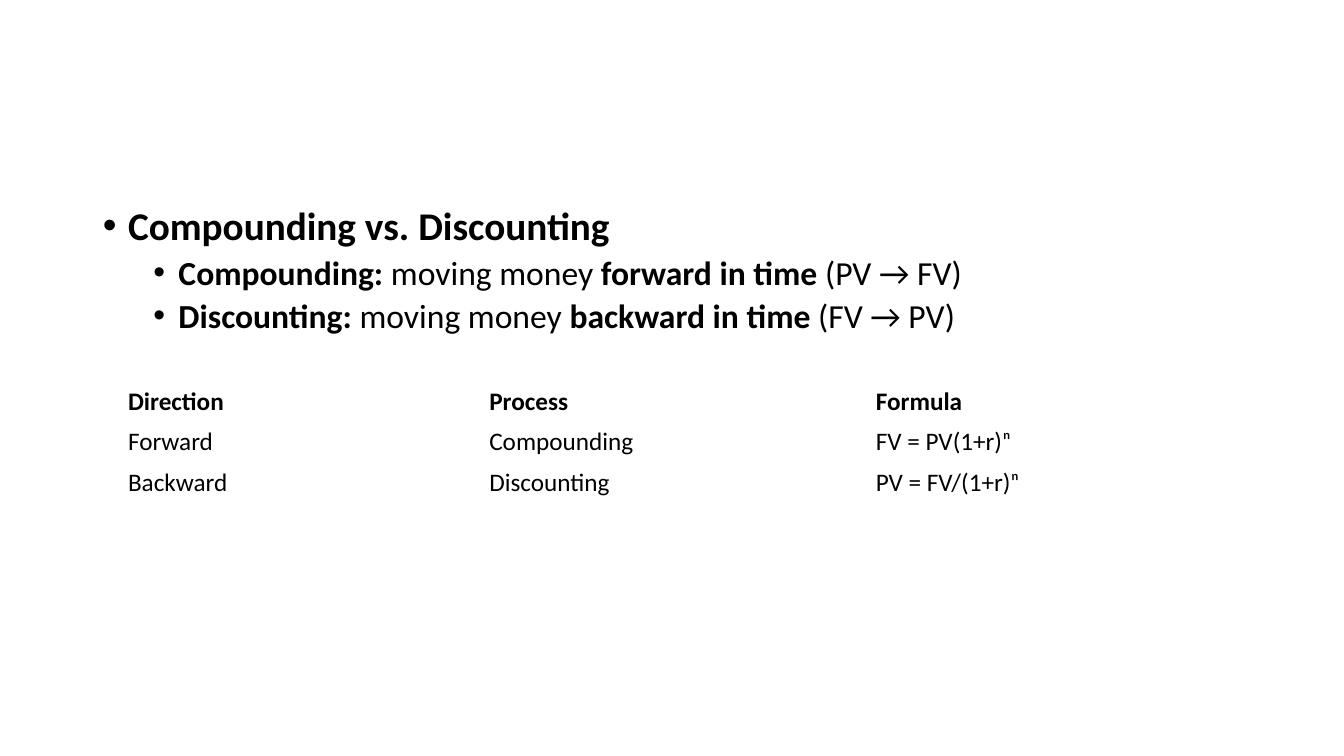
from lxml.etree import SubElement
from pptx import Presentation
from pptx.dml.color import RGBColor
from pptx.enum.text import MSO_ANCHOR, MSO_AUTO_SIZE, PP_ALIGN
from pptx.oxml.ns import qn
from pptx.util import Inches, Pt

COLORS = {"text": "000000"}
FONT = "Calibri"

OUTLINE = [
    (0, [("Compounding vs. Discounting", True)]),
    (1, [("Compounding:", True), (" moving money ", False),
         ("forward in time", True), (" (PV → FV)", False)]),
    (1, [("Discounting:", True), (" moving money ", False),
         ("backward in time", True), (" (FV → PV)", False)]),
]
LEVELS = [
    {"indent": 0.25, "before": 0, "size": 28},
    {"indent": 0.75, "before": 5, "size": 24},
]
HANGING = 0.25

FORMULAS = [
    ("Direction", "Process", "Formula"),
    ("Forward", "Compounding", "FV = PV(1+r)ⁿ"),
    ("Backward", "Discounting", "PV = FV/(1+r)ⁿ"),
]
COLUMN_WIDTHS = [3.58, 3.83, 3.83]


def add_run(paragraph, text, size, bold):
    run = paragraph.add_run()
    run.text = text
    run.font.name = FONT
    run.font.size = Pt(size)
    run.font.bold = bold
    run.font.color.rgb = RGBColor.from_string(COLORS["text"])


def set_bullet(paragraph, indent):
    properties = paragraph._p.get_or_add_pPr()
    properties.set("marL", str(Inches(indent)))
    properties.set("indent", str(-Inches(HANGING)))
    SubElement(properties, qn("a:buFont")).set("typeface", "Arial")
    SubElement(properties, qn("a:buChar")).set("char", "•")


def fill_outline(body, left, top, width, height):
    body.left, body.top = Inches(left), Inches(top)
    body.width, body.height = Inches(width), Inches(height)
    frame = body.text_frame
    frame.word_wrap = True
    frame.auto_size = MSO_AUTO_SIZE.NONE
    frame.vertical_anchor = MSO_ANCHOR.TOP
    for index, (level, pieces) in enumerate(OUTLINE):
        paragraph = frame.add_paragraph() if index else frame.paragraphs[0]
        style = LEVELS[level]
        paragraph.level = level
        set_bullet(paragraph, style["indent"])
        paragraph.alignment = PP_ALIGN.LEFT
        paragraph.line_spacing = 0.9
        paragraph.space_before = Pt(style["before"])
        for text, bold in pieces:
            add_run(paragraph, text, style["size"], bold)


def add_formula_table(slide, left, top, width, height):
    table = slide.shapes.add_table(
        len(FORMULAS), len(COLUMN_WIDTHS),
        Inches(left), Inches(top), Inches(width), Inches(height)).table
    table.first_row = False
    table.horz_banding = False
    for column, share in zip(table.columns, COLUMN_WIDTHS):
        column.width = Inches(width * share / sum(COLUMN_WIDTHS))
    for row, texts in enumerate(FORMULAS):
        for column, text in enumerate(texts):
            cell = table.cell(row, column)
            cell.fill.background()
            cell.vertical_anchor = MSO_ANCHOR.MIDDLE
            add_run(cell.text_frame.paragraphs[0], text, 18, row == 0)


def main():
    deck = Presentation()
    deck.slide_width, deck.slide_height = Inches(13.33), Inches(7.5)
    slide = deck.slides.add_slide(deck.slide_layouts[1])
    title = slide.shapes.title.element
    title.getparent().remove(title)
    fill_outline(slide.placeholders[1], 0.92, 2, 11.5, 4.76)
    add_formula_table(slide, 1.17, 3.78, 11.25, 1.2)
    deck.save("out.pptx")


if __name__ == "__main__":
    main()
